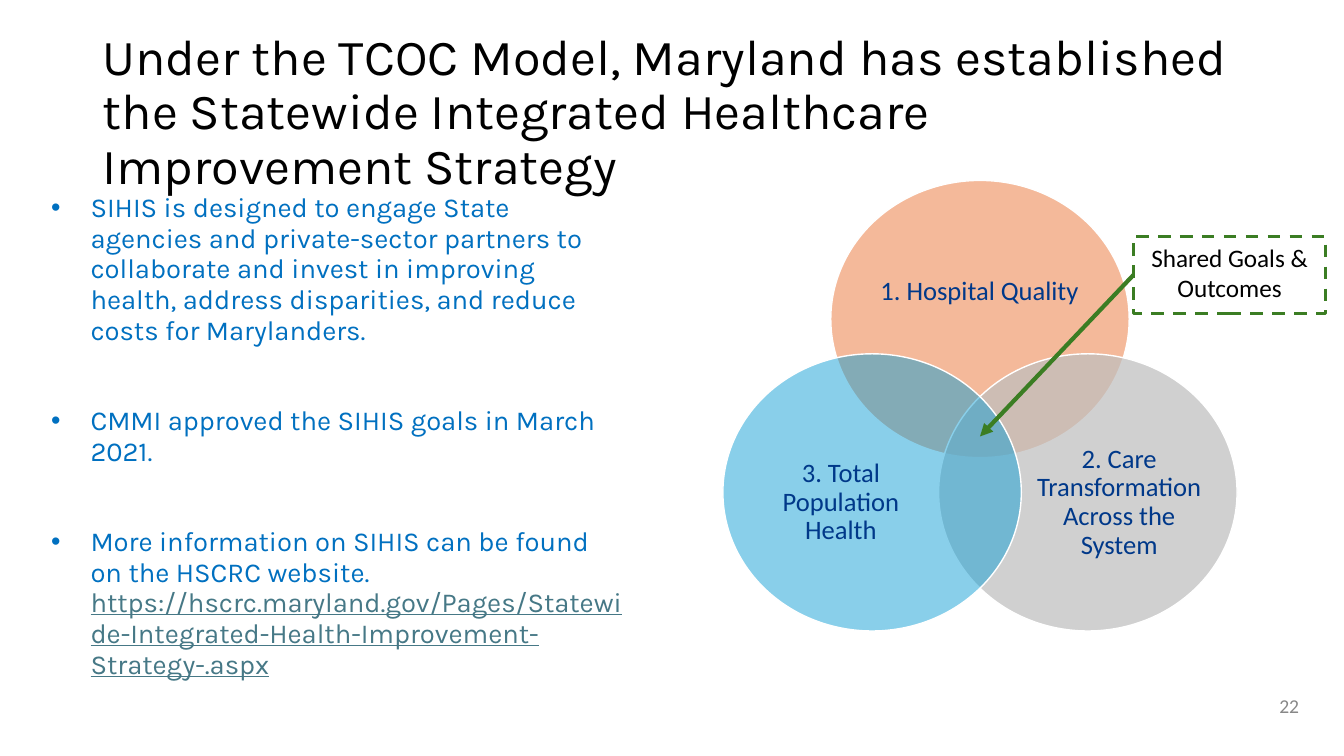
from dataclasses import dataclass

from lxml.etree import SubElement
from pptx import Presentation
from pptx.dml.color import RGBColor
from pptx.enum.dml import MSO_LINE_DASH_STYLE as Dash
from pptx.enum.shapes import MSO_CONNECTOR as Connector, MSO_SHAPE as Shape
from pptx.enum.text import MSO_ANCHOR as Anchor, PP_ALIGN as Align
from pptx.oxml.ns import qn
from pptx.util import Inches, Pt


@dataclass(frozen=True)
class Theme:
    heading_font: str = "Karla"
    body_font: str = "Calibri"
    title_size: float = 36
    bullet_size: float = 19.6
    circle_size: float = 19
    callout_size: float = 18
    number_size: float = 14
    black: str = "000000"
    white: str = "FFFFFF"
    bullet_blue: str = "0070C0"
    link: str = "467886"
    navy: str = "003889"
    green: str = "3B7D23"
    gray: str = "888888"
    orange: str = "E97132"
    silver: str = "BFBFBF"
    sky: str = "0F9ED5"


@dataclass(frozen=True)
class Box:
    left: float
    top: float
    width: float
    height: float

    def lengths(self):
        return [Inches(value) for value in (self.left, self.top, self.width, self.height)]

    def inner(self, left, top, width, height):
        return Box(self.left + left, self.top + top, width, height)


THEME = Theme()
TITLE = "Under the TCOC Model, Maryland has established the Statewide Integrated Healthcare Improvement Strategy"
BULLETS = [
    [("SIHIS is designed to engage State agencies and private-sector partners to collaborate and invest "
      "in improving health, address disparities, and reduce costs for Marylanders.", False)],
    [("CMMI approved the SIHIS goals in March 2021.", False)],
    [("More information on SIHIS can be found on the HSCRC website. ", False),
     ("https://hscrc.maryland.gov/Pages/Statewide-Integrated-Health-Improvement-Strategy-.aspx", True)],
]


def set_values(target, values):
    for name, value in values.items():
        setattr(target, name, value)


def add_run(paragraph, text, font, size, color, underline=None):
    run = paragraph.add_run()
    run.text = text
    set_values(run.font, {"name": font, "size": Pt(size), "underline": underline})
    run.font.color.rgb = RGBColor.from_string(color)


def add_text_box(slide, box, anchor=Anchor.TOP, inset=(0.1, 0.05)):
    frame = slide.shapes.add_textbox(*box.lengths()).text_frame
    side, edge = (Inches(value) for value in inset)
    set_values(frame, {"word_wrap": True, "vertical_anchor": anchor, "margin_left": side,
                       "margin_right": side, "margin_top": edge, "margin_bottom": edge})
    return frame


def set_line(line, color, width, dash=None):
    line.color.rgb = RGBColor.from_string(color)
    set_values(line, {"width": Pt(width), "dash_style": dash})


def add_bullet(paragraph):
    properties = paragraph._p.get_or_add_pPr()
    properties.set("marL", str(Inches(0.5)))
    properties.set("indent", str(Inches(-0.39)))
    SubElement(properties, qn("a:buSzPct"), val="98000")
    SubElement(properties, qn("a:buFont"), typeface="Arial")
    SubElement(properties, qn("a:buChar"), char="•")


def add_title(slide, box):
    paragraph = add_text_box(slide, box, Anchor.MIDDLE).paragraphs[0]
    paragraph.line_spacing = 0.9
    add_run(paragraph, TITLE, THEME.heading_font, THEME.title_size, THEME.black)


def add_bullets(slide, box):
    frame = add_text_box(slide, box)
    for index, runs in enumerate(BULLETS):
        paragraph = frame.add_paragraph() if index else frame.paragraphs[0]
        add_bullet(paragraph)
        set_values(paragraph, {"line_spacing": 0.94, "space_before": Pt(42 if index else 0)})
        for text, is_link in runs:
            color = THEME.link if is_link else THEME.bullet_blue
            add_run(paragraph, text, THEME.heading_font, THEME.bullet_size, color, is_link or None)


def add_page_number(slide, box):
    paragraph = add_text_box(slide, box, Anchor.MIDDLE).paragraphs[0]
    add_run(paragraph, "22", THEME.body_font, THEME.number_size, THEME.gray)


def add_circle(slide, box, label_box, text, color, opacity):
    circle = slide.shapes.add_shape(Shape.OVAL, *box.lengths())
    circle.shadow.inherit = False
    circle.fill.solid()
    circle.fill.fore_color.rgb = RGBColor.from_string(color)
    color_element = circle._element.spPr.find(qn("a:solidFill"))[0]
    SubElement(color_element, qn("a:alpha"), val=str(opacity * 1000))
    set_line(circle.line, THEME.white, 1)
    paragraph = add_text_box(slide, label_box, Anchor.MIDDLE, (0, 0)).paragraphs[0]
    set_values(paragraph, {"alignment": Align.CENTER, "line_spacing": 0.9})
    add_run(paragraph, text, THEME.body_font, THEME.circle_size, THEME.navy)


def add_venn(slide, box):
    width, height = 2.96, 2.75
    right, bottom = box.width - width, box.height - height
    top_label, side_label = (2.17, 1.24), (1.78, 1.51)
    circles = [
        ("1. Hospital Quality", THEME.orange, 49, right / 2, 0, (0.39, 0.49, *top_label)),
        ("2. Care Transformation Across the System", THEME.silver, 72, right, bottom, (0.9, 0.72, *side_label)),
        ("3. Total Population Health", THEME.sky, 49, 0, bottom, (0.28, 0.72, *side_label)),
    ]
    for text, color, opacity, left, top, label in circles:
        circle_box = box.inner(left, top, width, height)
        add_circle(slide, circle_box, circle_box.inner(*label), text, color, opacity)


def add_callout(slide, box, target):
    callout = slide.shapes.add_shape(Shape.RECTANGLE, *box.lengths())
    callout.shadow.inherit = False
    callout.fill.background()
    set_line(callout.line, THEME.green, 2.25, Dash.DASH)
    set_values(callout.text_frame, {"word_wrap": True, "vertical_anchor": Anchor.TOP})
    paragraph = callout.text_frame.paragraphs[0]
    paragraph.alignment = Align.CENTER
    add_run(paragraph, "Shared Goals & Outcomes", THEME.body_font, THEME.callout_size, THEME.black)

    start = (box.left, box.top + box.height / 2)
    points = [Inches(value) for value in (*start, *target)]
    arrow = slide.shapes.add_connector(Connector.STRAIGHT, *points)
    arrow.begin_connect(callout, 1)
    set_line(arrow.line, THEME.green, 3)
    SubElement(arrow.line._get_or_add_ln(), qn("a:tailEnd"), type="triangle")
    SubElement(arrow._element.spPr, qn("a:effectLst"))


def main():
    presentation = Presentation()
    set_values(presentation, {"slide_width": Inches(13.33), "slide_height": Inches(7.5)})
    slide = presentation.slides.add_slide(presentation.slide_layouts[6])
    add_title(slide, Box(0.92, 0.4, 11.5, 1.45))
    add_bullets(slide, Box(0.3, 1.86, 6, 5.56))
    add_page_number(slide, Box(12.59, 6.8, 0.63, 0.4))
    add_venn(slide, Box(7.17, 1.79, 5.1, 4.47))
    add_callout(slide, Box(11.24, 2.35, 1.91, 0.76), (9.72, 4.33))
    presentation.save("out.pptx")


if __name__ == "__main__":
    main()
